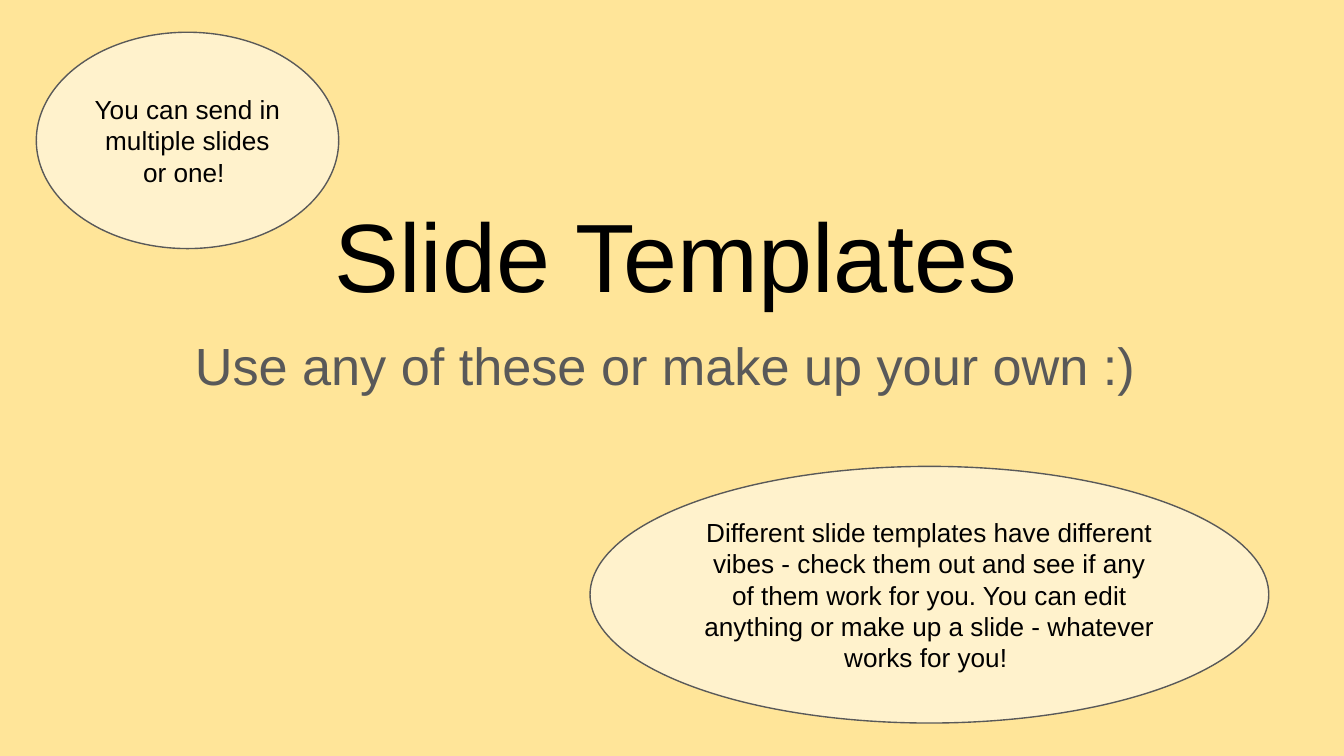
from pptx import Presentation
from pptx.dml.color import RGBColor
from pptx.enum.shapes import MSO_SHAPE as Shape
from pptx.enum.text import MSO_ANCHOR as Anchor, PP_ALIGN as Align
from pptx.util import Inches, Pt

COLORS = {
    "background": "FFE599",
    "bubble": "FFF2CC",
    "gray": "595959",
    "black": "000000",
}


def color(name):
    return RGBColor.from_string(COLORS[name])


def write_text(shape, text, size=14, text_color="black", anchor=Anchor.MIDDLE):
    frame = shape.text_frame
    frame.word_wrap = True
    frame.vertical_anchor = anchor
    frame.margin_left = frame.margin_right = Inches(0.1)
    frame.margin_top = frame.margin_bottom = Inches(0.1)
    paragraph = frame.paragraphs[0]
    paragraph.alignment = Align.CENTER
    run = paragraph.add_run()
    run.text = text
    run.font.name = "Arial"
    run.font.size = Pt(size)
    run.font.color.rgb = color(text_color)


# Widescreen 16:9 slide
presentation = Presentation()
presentation.slide_width = Inches(10)
presentation.slide_height = Inches(10) * 9 // 16
slide = presentation.slides.add_slide(presentation.slide_layouts[5])

# Background
slide.background.fill.solid()
slide.background.fill.fore_color.rgb = color("background")

# Title
title = slide.shapes.title
title.left, title.top = Inches(0.47), Inches(0.18)
title.width, title.height = Inches(9.32), Inches(2.24)
write_text(title, "Slide Templates ", size=52, anchor=Anchor.BOTTOM)

# Subtitle
subtitle = slide.shapes.add_textbox(
    Inches(0.34), Inches(2.38), Inches(9.32), Inches(0.87))
write_text(subtitle, "Use any of these or make up your own :) ",
           size=28, text_color="gray", anchor=Anchor.TOP)

# Speech bubbles: left, top, width, height, text
bubbles = [
    (0.27, 0.24, 2.25, 1.61, "You can send in multiple slides or one! "),
    (4.39, 3.47, 5.05, 1.91,
     "Different slide templates have different vibes - check them out and "
     "see if any of them work for you. You can edit anything or make up a "
     "slide - whatever works for you! "),
]
for left, top, width, height, text in bubbles:
    bubble = slide.shapes.add_shape(
        Shape.OVAL, Inches(left), Inches(top), Inches(width), Inches(height))
    bubble.shadow.inherit = False
    bubble.fill.solid()
    bubble.fill.fore_color.rgb = color("bubble")
    bubble.line.color.rgb = color("gray")
    bubble.line.width = Pt(0.75)
    write_text(bubble, text)

presentation.save("out.pptx")
